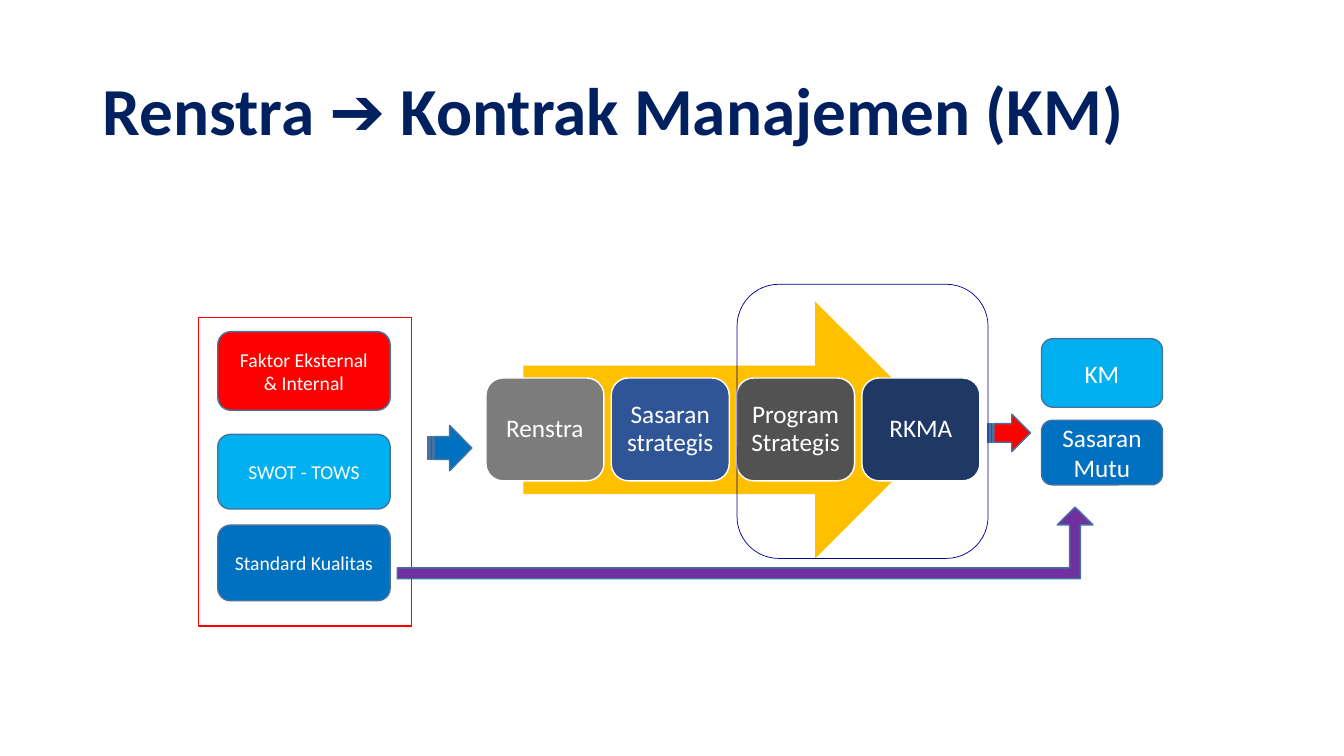
from pptx import Presentation
from pptx.dml.color import RGBColor
from pptx.enum.shapes import MSO_SHAPE as Shape
from pptx.enum.text import MSO_ANCHOR as Anchor, PP_ALIGN as Align
from pptx.util import Inches, Pt

TITLE = "Renstra ➔ Kontrak Manajemen (KM)"
STAGES = [
    ("Renstra", "7C7C7C"),
    ("Sasaran strategis", "2F5597"),
    ("Program Strategis", "525252"),
    ("RKMA", "203864"),
]
# text, fill, top, height
INPUTS = [
    ("Faktor Eksternal & Internal", "FF0000", 3.29, 0.78),
    ("SWOT - TOWS", "00B0F0", 4.31, 0.74),
    ("Standard Kualitas", "0070C0", 5.21, 0.75),
]
RESULTS = [
    ("KM", "00B0F0", 3.36, 0.68),
    ("Sasaran Mutu", "0070C0", 4.17, 0.64),
]
OUTLINE = "43739E"
STAGE_LEFT, STAGE_STEP = 4.82, 1.243


def color(value):
    return RGBColor.from_string(value)


def write_text(shape, text, size=18, font_color="FFFFFF", bold=False,
               align=Align.CENTER, spacing=1.0, inset=None):
    frame = shape.text_frame
    frame.word_wrap = True
    frame.vertical_anchor = Anchor.MIDDLE
    if inset is not None:
        frame.margin_left = frame.margin_right = Inches(inset)
        frame.margin_top = frame.margin_bottom = Inches(inset)
    paragraph = frame.paragraphs[0]
    paragraph.alignment = align
    paragraph.line_spacing = spacing
    run = paragraph.add_run()
    run.text = text
    run.font.name = "Calibri"
    run.font.size = Pt(size)
    run.font.bold = bold
    run.font.color.rgb = color(font_color)


def add_shape(slide, kind, box, fill=None, line=OUTLINE, width=1):
    """Add a preset shape; a fill or line of None is left out."""
    shape = slide.shapes.add_shape(kind, *map(Inches, box))
    shape.shadow.inherit = False
    if fill:
        shape.fill.solid()
        shape.fill.fore_color.rgb = color(fill)
    else:
        shape.fill.background()
    if line:
        shape.line.color.rgb = color(line)
        shape.line.width = Pt(width)
    else:
        shape.line.fill.background()
    return shape


def add_boxes(slide, boxes, left, width, size):
    for text, fill, top, height in boxes:
        box = add_shape(slide, Shape.ROUNDED_RECTANGLE, (left, top, width, height), fill)
        write_text(box, text, size=size)


def main():
    presentation = Presentation()
    presentation.slide_width = Inches(13.33)
    presentation.slide_height = Inches(7.5)
    slide = presentation.slides.add_slide(presentation.slide_layouts[6])

    title = slide.shapes.add_textbox(*map(Inches, (0.92, 0.4, 11.5, 1.45)))
    write_text(title, TITLE, size=48, font_color="002060", bold=True,
               align=Align.LEFT, spacing=0.9)

    add_shape(slide, Shape.RIGHT_ARROW, (5.19, 2.99, 4.17, 2.55), "FFC000", line=None)
    for index, (text, fill) in enumerate(STAGES):
        left = STAGE_LEFT + index * STAGE_STEP
        stage = add_shape(slide, Shape.ROUNDED_RECTANGLE, (left, 3.75, 1.17, 1.02),
                          fill, line="FFFFFF")
        write_text(stage, text, spacing=0.9, inset=0.07)

    add_boxes(slide, INPUTS, left=2.16, width=1.71, size=14)
    add_shape(slide, Shape.RECTANGLE, (1.97, 3.15, 2.11, 3.06), line="FF0000")
    add_shape(slide, Shape.STRIPED_RIGHT_ARROW, (4.24, 4.22, 0.44, 0.45), "0070C0")

    quality_arrow = add_shape(slide, Shape.BENT_UP_ARROW, (3.94, 5.03, 6.9, 0.71), "7030A0")
    quality_arrow.adjustments[0] = 0.15

    add_boxes(slide, RESULTS, left=10.33, width=1.2, size=18)
    add_shape(slide, Shape.STRIPED_RIGHT_ARROW, (9.8, 4.11, 0.42, 0.37), "FF0000")
    add_shape(slide, Shape.ROUNDED_RECTANGLE, (7.31, 2.82, 2.49, 2.72),
              line="000090", width=0.5)

    presentation.save("out.pptx")


if __name__ == "__main__":
    main()
